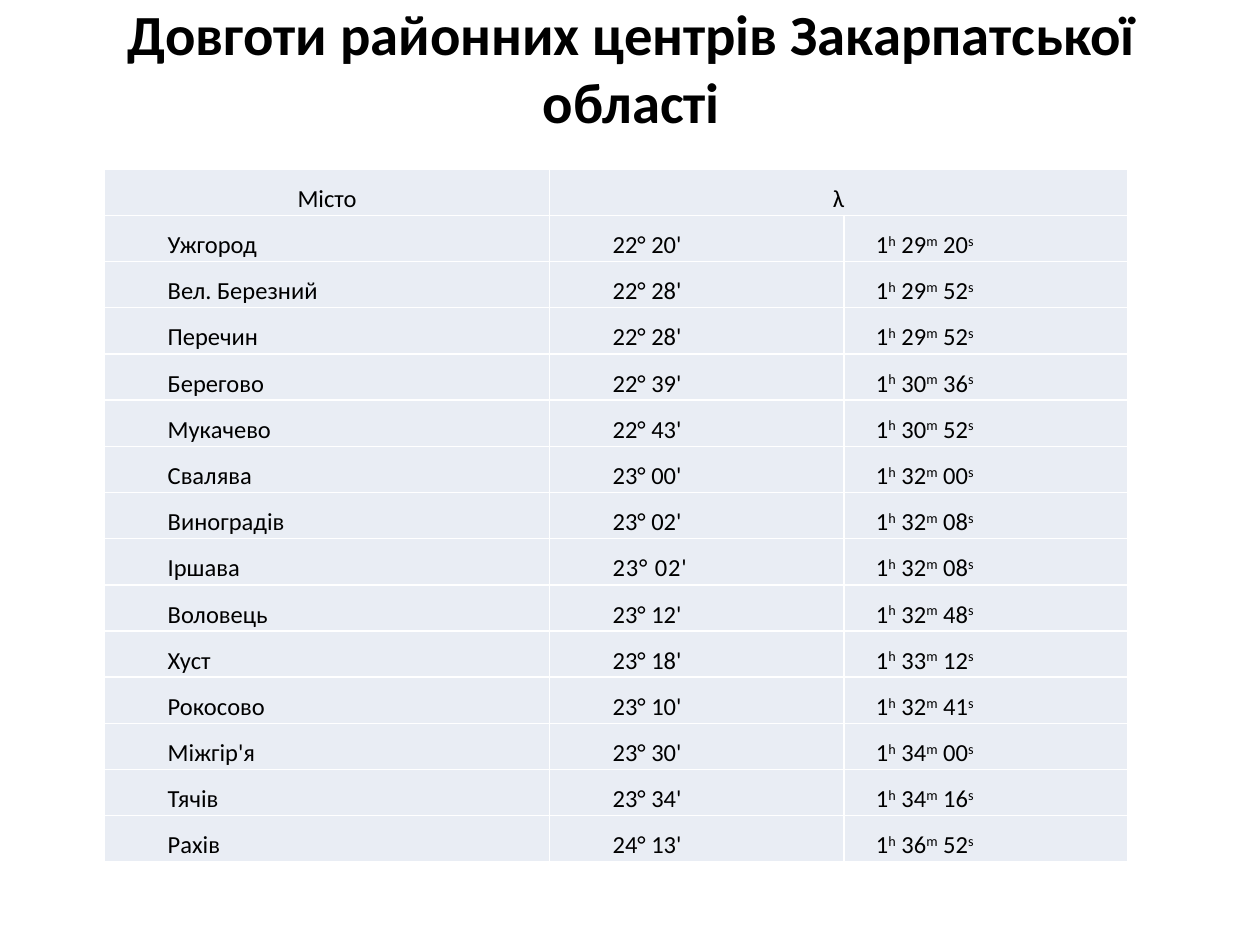
from lxml.etree import SubElement
from pptx import Presentation
from pptx.dml.color import RGBColor
from pptx.enum.text import MSO_ANCHOR, PP_ALIGN
from pptx.oxml.ns import qn
from pptx.util import Cm, Pt

COLOURS = {"text": "000000", "cell": "E9EDF4", "border": "FFFFFF"}
FONT = "Calibri"
TITLE = "Довготи районних центрів Закарпатської області"
HEADINGS = ("Місто", "λ")
SPACED_TOWN = "Іршава"
TOWNS = [
    ("Ужгород", "22° 20'", "1 29 20"),
    ("Вел. Березний", "22° 28'", "1 29 52"),
    ("Перечин", "22° 28'", "1 29 52"),
    ("Берегово", "22° 39'", "1 30 36"),
    ("Мукачево", "22° 43'", "1 30 52"),
    ("Свалява", "23° 00'", "1 32 00"),
    ("Виноградів", "23° 02'", "1 32 08"),
    ("Іршава", "23° 02'", "1 32 08"),
    ("Воловець", "23° 12'", "1 32 48"),
    ("Хуст", "23° 18'", "1 33 12"),
    ("Рокосово", "23° 10'", "1 32 41"),
    ("Міжгір'я", "23° 30'", "1 34 00"),
    ("Тячів", "23° 34'", "1 34 16"),
    ("Рахів", "24° 13'", "1 36 52"),
]
COLUMN_SHARES = (0.435, 0.288, 0.277)
COLUMN_INDENTS = (Cm(1.27), Cm(1.27), Cm(0.64))


def style_paragraph(paragraph, size, alignment, bold=False):
    paragraph.alignment = alignment
    font = paragraph.font
    font.name = FONT
    font.size = Pt(size)
    font.bold = bold
    font.color.rgb = RGBColor.from_string(COLOURS["text"])


def add_run(paragraph, text, **attributes):
    run = paragraph.add_run()
    run.text = text
    properties = run._r.get_or_add_rPr()
    for name, value in attributes.items():
        properties.set(name, value)


def add_time(paragraph, time):
    for index, (number, unit) in enumerate(zip(time.split(), "hms")):
        add_run(paragraph, number if index == 0 else f" {number}")
        add_run(paragraph, unit, baseline="30000")


def style_cell(cell):
    cell.margin_left = cell.margin_right = cell.margin_top = cell.margin_bottom = 0
    properties = cell._tc.get_or_add_tcPr()
    for side in ("a:lnL", "a:lnR", "a:lnT", "a:lnB"):
        line = SubElement(properties, qn(side), w=str(Pt(1)))
        fill = SubElement(line, qn("a:solidFill"))
        SubElement(fill, qn("a:srgbClr"), val=COLOURS["border"])
    cell.fill.solid()
    cell.fill.fore_color.rgb = RGBColor.from_string(COLOURS["cell"])


def start_cell_text(cell, alignment, indent=0):
    paragraph = cell.text_frame.paragraphs[0]
    paragraph.line_spacing = 1.5
    paragraph._p.get_or_add_pPr().set("indent", str(indent))
    style_paragraph(paragraph, 14, alignment)
    return paragraph


def add_title(slide, left, top, width, height):
    frame = slide.shapes.add_textbox(left, top, width, height).text_frame
    frame.word_wrap = True
    frame.vertical_anchor = MSO_ANCHOR.MIDDLE
    frame.margin_bottom = Cm(1.5)
    paragraph = frame.paragraphs[0]
    add_run(paragraph, TITLE)
    style_paragraph(paragraph, 32.4, PP_ALIGN.CENTER, bold=True)


def add_longitude_table(slide, left, top, width, height):
    row_count = len(TOWNS) + 1
    table = slide.shapes.add_table(
        row_count, len(COLUMN_SHARES), left, top, width, height
    ).table
    table.first_row = False
    table.horz_banding = False
    for column, share in zip(table.columns, COLUMN_SHARES):
        column.width = int(width * share)
    for row in table.rows:
        row.height = int(height / row_count)
    for cell in table.iter_cells():
        style_cell(cell)

    table.cell(0, 1).merge(table.cell(0, 2))
    for column_index, heading in enumerate(HEADINGS):
        paragraph = start_cell_text(table.cell(0, column_index), PP_ALIGN.CENTER)
        add_run(paragraph, heading)

    for row_index, (town, longitude, time) in enumerate(TOWNS, start=1):
        town_paragraph, longitude_paragraph, time_paragraph = (
            start_cell_text(table.cell(row_index, column_index), PP_ALIGN.JUSTIFY, indent)
            for column_index, indent in enumerate(COLUMN_INDENTS)
        )
        add_run(town_paragraph, town)
        spacing = {"spc": "50"} if town == SPACED_TOWN else {}
        add_run(longitude_paragraph, longitude, **spacing)
        add_time(time_paragraph, time)


def main():
    presentation = Presentation()
    presentation.slide_width = Cm(25.4)
    presentation.slide_height = Cm(19.05)
    slide = presentation.slides.add_slide(presentation.slide_layouts[6])
    add_title(slide, Cm(1.3), Cm(0.74), Cm(22.86), Cm(2.59))
    add_longitude_table(slide, Cm(2.11), Cm(3.41), Cm(20.62), Cm(13.97))
    presentation.save("out.pptx")


if __name__ == "__main__":
    main()
